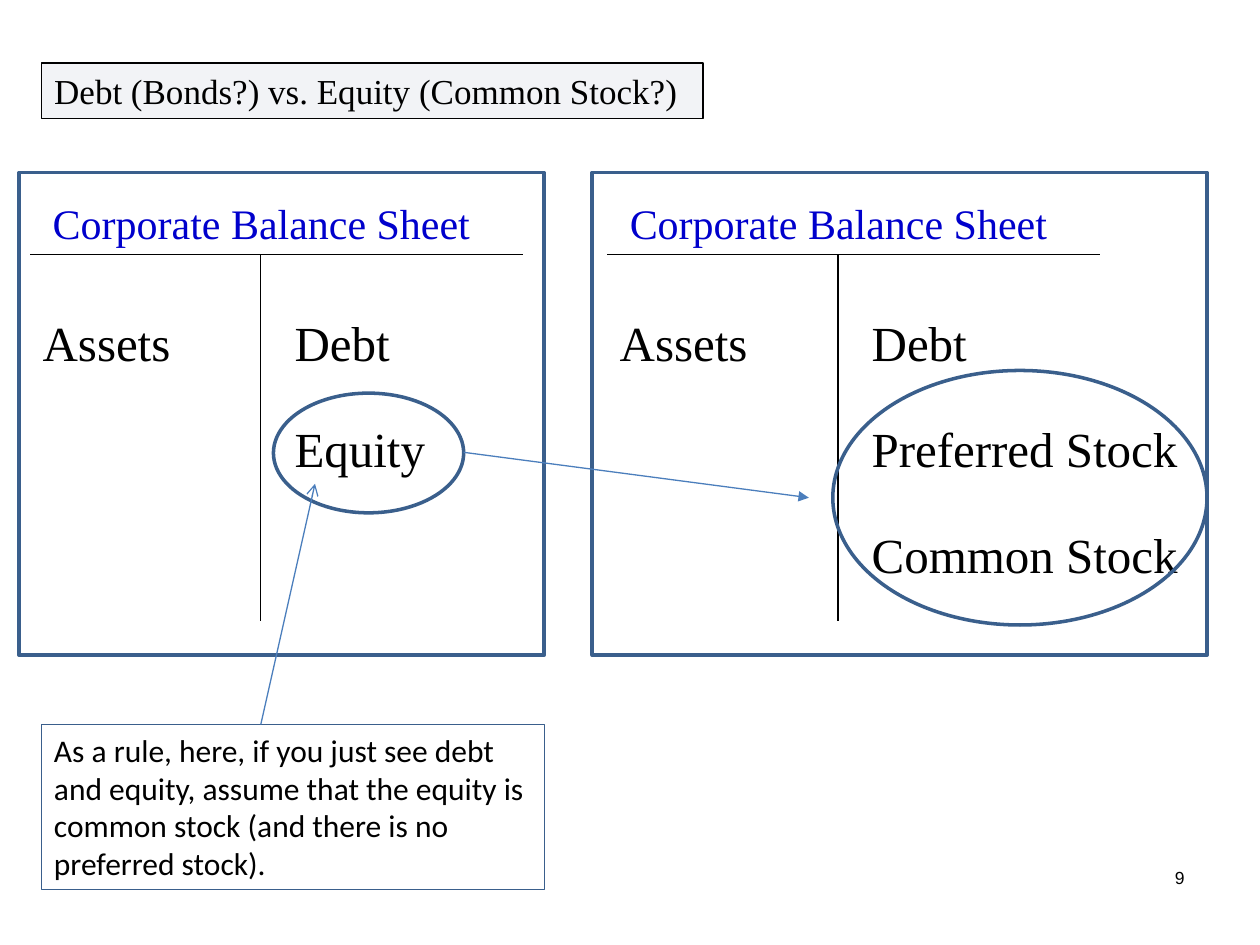
from lxml import etree
from pptx import Presentation
from pptx.dml.color import RGBColor
from pptx.enum import shapes, text
from pptx.oxml import ns
from pptx.util import Inches, Pt

SERIF = "Times New Roman"
BLACK, HEADING, OUTLINE, ARROW = "000000", "0000CC", "3A5F8C", "4B7EBC"

TITLE = "Debt (Bonds?) vs. Equity (Common Stock?)"
NOTE = ("As a rule, here, if you just see debt and equity, assume that the "
        "equity is common stock (and there is no preferred stock).")
PAGE_NUMBER = "9"
SHEET_HEADING = "Corporate Balance Sheet"
# Each sheet: left edge of its T-account, frame, circled area, claims
SHEETS = [
    {"left": 0.24, "frame": (0.15, 1.37, 4.17, 3.83),
     "circle": (2.17, 3.12, 1.51, 0.95),
     "claims": ["Debt", "Equity"]},
    {"left": 4.82, "frame": (4.7, 1.37, 4.88, 3.83),
     "circle": (6.61, 2.94, 2.97, 2.02),
     "claims": ["Debt", "Preferred Stock", "Common Stock"]},
]
ARROWS = [((2.07, 5.75), (2.5, 3.84), "arrow"),
          ((3.68, 3.59), (6.42, 3.95), "triangle")]
HEADING_TOP, RULE_Y, STEM_END = 1.52, 2.02, 4.93
ROW_TOP, ROW_STEP = 2.43, 0.84


def rgb(color):
    return RGBColor.from_string(color)


def place(shape, box):
    shape.left, shape.top, shape.width, shape.height = map(Inches, box)


def write(shape, words, size, font=SERIF, color=BLACK,
          align=text.PP_ALIGN.LEFT, anchor=text.MSO_ANCHOR.TOP):
    frame = shape.text_frame
    frame.text = words
    frame.word_wrap = True
    frame.auto_size = text.MSO_AUTO_SIZE.NONE
    frame.vertical_anchor = anchor
    paragraph = frame.paragraphs[0]
    paragraph.alignment = align
    paragraph.font.size = Pt(size)
    paragraph.font.name = font
    paragraph.font.color.rgb = rgb(color)


def add_label(slide, box, words, size, **style):
    label = slide.shapes.add_textbox(*map(Inches, box))
    write(label, words, size, **style)


def stroke(shape, color, width):
    shape.line.color.rgb = rgb(color)
    shape.line.width = Pt(width)


def add_outline(slide, kind, box, width=2):
    outline = slide.shapes.add_shape(kind, *map(Inches, box))
    outline.shadow.inherit = False
    outline.fill.background()
    stroke(outline, OUTLINE, width)
    return outline


def add_line(slide, start, end, color=BLACK, head=None):
    line = slide.shapes.add_connector(
        shapes.MSO_CONNECTOR.STRAIGHT, *map(Inches, start + end))
    stroke(line, color, 0.75)
    if head:
        etree.SubElement(line.line._get_or_add_ln(), ns.qn("a:tailEnd"), type=head)
    etree.SubElement(line._element.spPr, ns.qn("a:effectLst"))


def add_title(slide):
    title = slide.shapes.title
    place(title, (0.33, 0.5, 5.25, 0.44))
    title.fill.solid()
    title.fill.fore_color.rgb = rgb("002060")
    tint = title._element.spPr.find(".//" + ns.qn("a:srgbClr"))
    etree.SubElement(tint, ns.qn("a:alpha"), val="5000")
    stroke(title, BLACK, 0.75)
    write(title, TITLE, 20, anchor=text.MSO_ANCHOR.MIDDLE)


def add_sheet(slide, sheet):
    left = sheet["left"]
    stem = left + 1.83
    add_line(slide, (left, RULE_Y), (left + 3.91, RULE_Y))
    add_line(slide, (stem, RULE_Y), (stem, STEM_END))
    add_label(slide, (left + 0.08, HEADING_TOP, 3.83, 0.51),
              SHEET_HEADING, 24, color=HEADING)
    add_label(slide, (left, ROW_TOP, 1.67, 0.57), "Assets", 28)
    for row, claim in enumerate(sheet["claims"]):
        add_label(slide, (left + 2, ROW_TOP + row * ROW_STEP, 2.67, 0.57), claim, 28)
    add_outline(slide, shapes.MSO_SHAPE.RECTANGLE, sheet["frame"])
    add_outline(slide, shapes.MSO_SHAPE.OVAL, sheet["circle"])


def main():
    prs = Presentation()
    prs.slide_width, prs.slide_height = Inches(10), Inches(7.5)
    slide = prs.slides.add_slide(prs.slide_layouts.get_by_name("Title Only"))
    add_title(slide)
    for sheet in SHEETS:
        add_sheet(slide, sheet)
    note = add_outline(slide, shapes.MSO_SHAPE.RECTANGLE,
                       (0.33, 5.75, 3.99, 1.31), width=0.75)
    write(note, NOTE, 18, font="Calibri")
    for start, end, head in ARROWS:
        add_line(slide, start, end, ARROW, head)
    add_label(slide, (7.42, 6.83, 2.08, 0.5), PAGE_NUMBER, 10,
              font="Arial", align=text.PP_ALIGN.RIGHT)
    prs.save("out.pptx")


if __name__ == "__main__":
    main()
